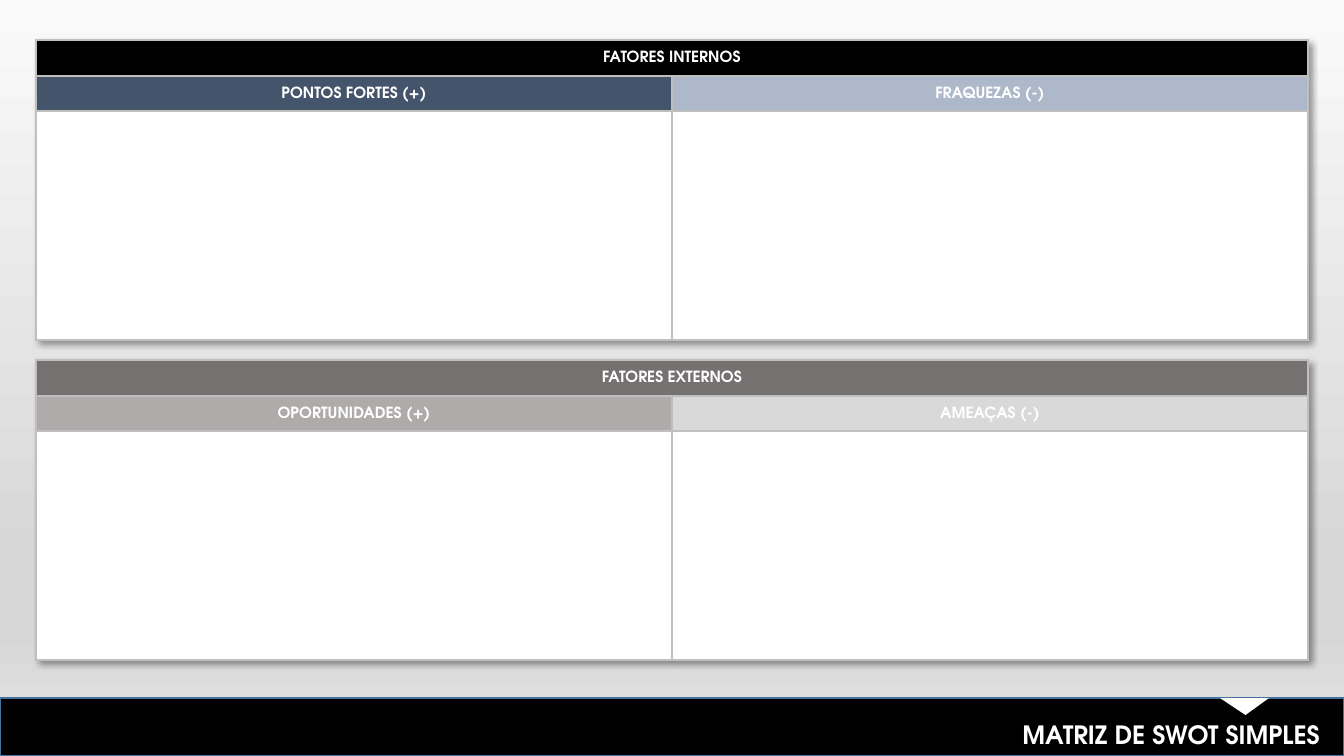
from lxml import etree
from pptx import Presentation
from pptx.dml.color import RGBColor
from pptx.enum.shapes import MSO_SHAPE
from pptx.enum.text import MSO_ANCHOR, PP_ALIGN
from pptx.oxml import parse_xml
from pptx.oxml.ns import nsdecls, qn
from pptx.util import Emu, Pt

RECTANGLE, TRIANGLE = MSO_SHAPE.RECTANGLE, MSO_SHAPE.ISOSCELES_TRIANGLE
MIDDLE = MSO_ANCHOR.MIDDLE
CENTER, RIGHT = PP_ALIGN.CENTER, PP_ALIGN.RIGHT

EMU_PER_PX = 914400 / 100.8
FONT = "TeX Gyre Adventor"
WHITE, BLACK, GRID_GREY = "FFFFFF", "000000", "BFBFBF"
BACKGROUND_STOPS = [(0, "FAFAFA"), (74, "D7D7D7"), (83, "D7D7D7"), (100, "E4E4E4")]

SLIDE_WIDTH, SLIDE_HEIGHT = 1344, 756
BAND_TOP = 698
TABLE_LEFT, COLUMN_WIDTH = 36, 636
ROW_HEIGHTS = [36, 35, 229]
TABLE_TOP, TABLE_STEP = 40, 320

# Each table: heading with its fill, then the two column labels with theirs
FACTORS = [
    (("FATORES INTERNOS", BLACK),
     [("PONTOS FORTES (+)", "44546A"), ("FRAQUEZAS (-)", "ADB9CA")]),
    (("FATORES EXTERNOS", "767171"),
     [("OPORTUNIDADES (+)", "AFABAB"), ("AMEAÇAS (-)", "D9D9D9")]),
]


def px(length):
    return Emu(round(length * EMU_PER_PX))


def color(value):
    return RGBColor.from_string(value)


def set_all(target, values):
    for name, value in values.items():
        setattr(target, name, value)


def write(frame, text, size, align):
    para = frame.paragraphs[0]
    para.alignment = align
    span = para.add_run()
    span.text = text
    set_all(span.font, {"name": FONT, "size": Pt(size), "bold": True})
    span.font.color.rgb = color(WHITE)


def paint_background(page):
    fill = page.background.fill
    fill.gradient()
    fill.gradient_angle = 270
    stops = page.background._cSld.find(".//" + qn("a:gsLst"))
    for stop in list(stops):
        stops.remove(stop)
    for position, value in BACKGROUND_STOPS:
        stop = etree.SubElement(stops, qn("a:gs"), pos=str(position * 1000))
        etree.SubElement(stop, qn("a:srgbClr"), val=value)


def add_block(page, kind, bounds, fill, line=None):
    block = page.shapes.add_shape(kind, *map(px, bounds))
    block.shadow.inherit = False
    block.fill.solid()
    block.fill.fore_color.rgb = color(fill)
    if line:
        block.line.color.rgb = color(line)
        block.line.width = Pt(1)
    else:
        block.line.fill.background()
    return block


def format_cell(cell, fill, text=None):
    set_all(cell, {"margin_left": px(1), "margin_right": px(1), "margin_top": px(1),
                   "margin_bottom": 0, "vertical_anchor": MIDDLE})
    if text:
        write(cell.text_frame, text, 11, CENTER)
    # Borders come before the fill in the cell properties
    properties = cell._tc.get_or_add_tcPr()
    for side in ("lnL", "lnR", "lnT", "lnB"):
        border = etree.SubElement(properties, qn("a:" + side), w=str(Pt(1)))
        paint = etree.SubElement(border, qn("a:solidFill"))
        etree.SubElement(paint, qn("a:srgbClr"), val=GRID_GREY)
    cell.fill.solid()
    cell.fill.fore_color.rgb = color(fill)


def add_shadow(table):
    table._tbl.tblPr.insert(0, parse_xml(
        f'<a:effectLst {nsdecls("a")}>'
        '<a:outerShdw blurRad="50800" dist="38100" dir="2700000" algn="tl" rotWithShape="0">'
        '<a:srgbClr val="000000"><a:alpha val="40000"/></a:srgbClr>'
        '</a:outerShdw></a:effectLst>'))


def add_factor_table(page, top, heading, labels):
    bounds = (TABLE_LEFT, top, COLUMN_WIDTH * len(labels), sum(ROW_HEIGHTS))
    table = page.shapes.add_table(len(ROW_HEIGHTS), len(labels), *map(px, bounds)).table
    set_all(table, {"first_row": False, "horz_banding": False})
    for row, height in zip(table.rows, ROW_HEIGHTS):
        row.height = px(height)
    for column in table.columns:
        column.width = px(COLUMN_WIDTH)
    table.cell(0, 0).merge(table.cell(0, len(labels) - 1))
    for index, (label, fill) in enumerate(labels):
        format_cell(table.cell(0, index), heading[1], heading[0] if index == 0 else None)
        format_cell(table.cell(1, index), fill, label)
        format_cell(table.cell(2, index), WHITE)
    add_shadow(table)


def place_title(page, text):
    title = page.shapes.title
    set_all(title, {"left": px(646), "top": px(714), "width": px(684), "height": px(40)})
    set_all(title.text_frame, {"word_wrap": True, "vertical_anchor": MIDDLE})
    write(title.text_frame, text, 18, RIGHT)
    # Bring the title in front of the band
    page.shapes._spTree.append(title._element)


def main():
    deck = Presentation()
    set_all(deck, {"slide_width": px(SLIDE_WIDTH), "slide_height": px(SLIDE_HEIGHT)})
    page = deck.slides.add_slide(deck.slide_layouts[5])
    paint_background(page)

    # Title band with its pointer
    add_block(page, RECTANGLE, (0, BAND_TOP, SLIDE_WIDTH, SLIDE_HEIGHT - BAND_TOP),
              BLACK, "43739E")
    pointer = add_block(page, TRIANGLE, (1220, BAND_TOP, 49, 17), WHITE)
    pointer.rotation = 180
    pointer.adjustments[0] = 0.48
    place_title(page, "MATRIZ DE SWOT SIMPLES")

    # Internal and external factors
    for index, (heading, labels) in enumerate(FACTORS):
        add_factor_table(page, TABLE_TOP + index * TABLE_STEP, heading, labels)

    deck.save("out.pptx")


if __name__ == "__main__":
    main()
